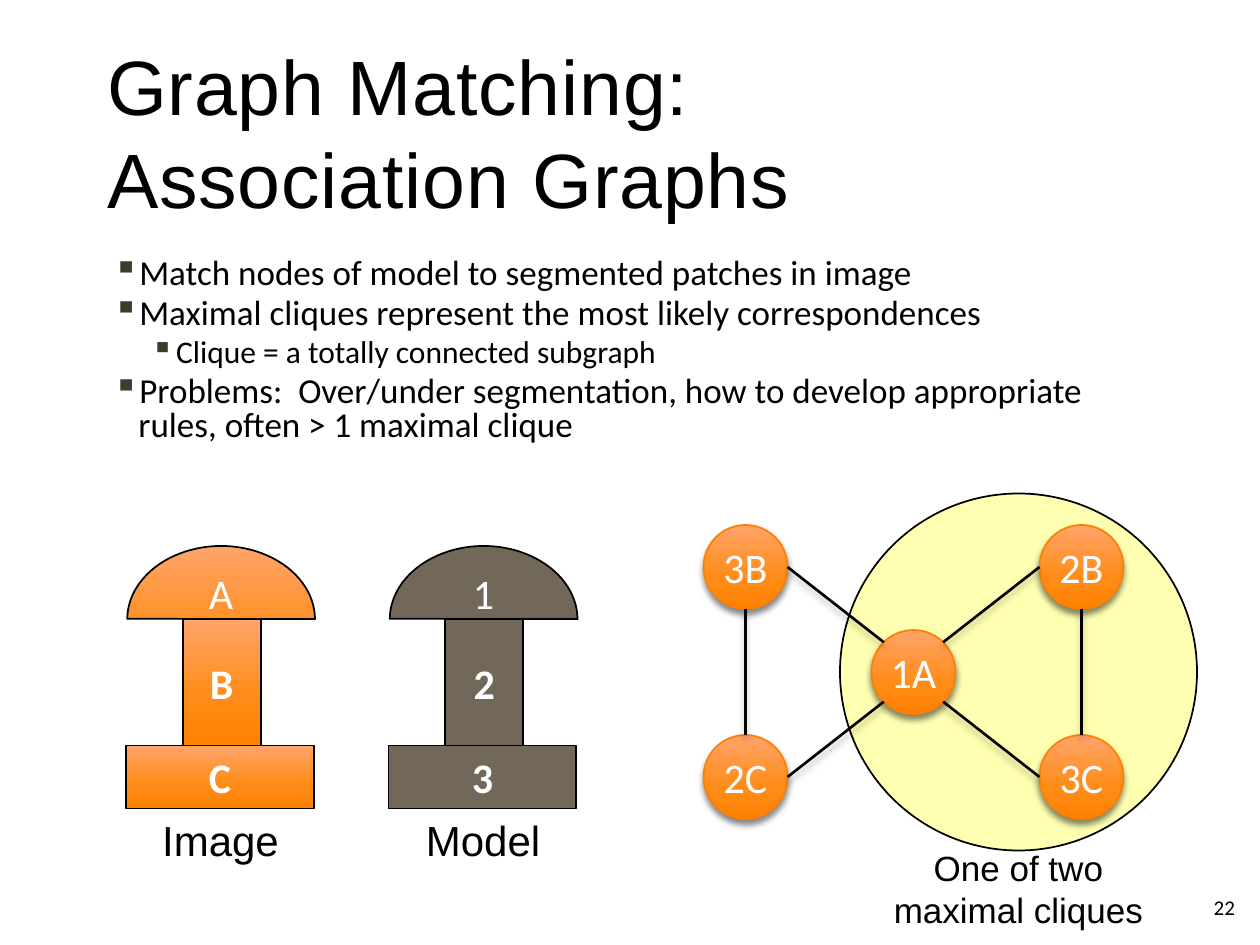
from copy import deepcopy
from math import sqrt
from lxml.etree import SubElement
from pptx import Presentation
from pptx.dml.color import RGBColor
from pptx.enum.shapes import MSO_CONNECTOR, MSO_SHAPE
from pptx.enum.text import MSO_ANCHOR, MSO_AUTO_SIZE, PP_ALIGN
from pptx.oxml.ns import qn
from pptx.util import Inches, Pt

BLACK = RGBColor(0x00, 0x00, 0x00)
WHITE = RGBColor(0xFF, 0xFF, 0xFF)
YELLOW = RGBColor(0xFF, 0xFF, 0x66)
BROWN = RGBColor(0x71, 0x68, 0x5A)
ORANGE = RGBColor(0xFF, 0x80, 0x00)
GLOW = [(0, RGBColor(0xFF, 0xA4, 0x6B)), (0.6, RGBColor(0xFF, 0x8D, 0x1A)), (1, ORANGE)]

deck = Presentation()
deck.slide_width, deck.slide_height = Inches(10), Inches(7.5)
slide = deck.slides.add_slide(deck.slide_layouts[5])
shapes = slide.shapes
# The slide is a grid of 120 columns by 90 rows
unit = deck.slide_width / 120


def put(frame, text, size=24, font="Calibri", color=BLACK, bold=False,
        align=PP_ALIGN.CENTER, anchor=MSO_ANCHOR.TOP, wrap=True, inset=None, track=None):
    frame.text = text
    frame.auto_size = MSO_AUTO_SIZE.NONE
    frame.word_wrap = wrap
    frame.vertical_anchor = anchor
    if inset is not None:
        frame.margin_left = frame.margin_right = inset
        frame.margin_top = frame.margin_bottom = inset
    for para in frame.paragraphs:
        para.alignment = align
        for run in para.runs:
            run.font.size, run.font.name = Pt(size), font
            run.font.bold, run.font.color.rgb = bold, color
            if track:
                run.font._element.set("spc", str(track))


def style(item, fill=None, line=BLACK, width=1, shade=None):
    """Set fill (a colour or gradient stops), line and shadow (opacity, blur, distance)."""
    props = item._element.spPr
    if isinstance(fill, list):
        item.fill.gradient()
        item.fill.gradient_angle = 270
        stops = props.find(qn("a:gradFill")).find(qn("a:gsLst"))
        stops.append(deepcopy(stops[-1]))
        for stop, (pos, color) in zip(item.fill.gradient_stops, fill):
            stop.position, stop.color.rgb = pos, color
    elif fill is not None:
        item.fill.solid()
        item.fill.fore_color.rgb = fill
    item.line.color.rgb, item.line.width = line, Pt(width)
    effect = SubElement(props, qn("a:effectLst"))
    if shade:
        alpha, blur, dist = shade
        outer = SubElement(effect, qn("a:outerShdw"), blurRad=str(Pt(blur)),
                           dist=str(Pt(dist)), dir="5400000", rotWithShape="0")
        tint = SubElement(outer, qn("a:srgbClr"), val="000000")
        SubElement(tint, qn("a:alpha"), val=str(alpha * 1000))


# Title
title = shapes.title
title.left, title.top, title.width, title.height = [int(n * unit) for n in (9, 5, 102, 15)]
put(title.text_frame, "Graph Matching:\vAssociation Graphs", size=44, font="Arial",
    align=PP_ALIGN.LEFT, anchor=MSO_ANCHOR.MIDDLE, track=50)

# Half-clear disc behind one clique
disc = shapes.add_shape(MSO_SHAPE.OVAL, *[int(n * unit) for n in (80, 47, 34, 34)])
style(disc, YELLOW)
tint = disc._element.spPr.find(qn("a:solidFill"))[0]
SubElement(tint, qn("a:alpha"), val="50000")

# Captions and page number
captions = [
    ("One of two maximal cliques", (82, 80, 30, 9.2), dict(size=20, font="Arial")),
    ("Image", (14, 77, 14, 6), dict(font="Arial")),
    ("Model", (39, 77, 14, 6), dict(font="Arial")),
    ("22", (106.8, 84, 12, 4.8),
     dict(size=12, align=PP_ALIGN.RIGHT, anchor=MSO_ANCHOR.MIDDLE)),
]
for text, place, form in captions:
    box = shapes.add_textbox(*[int(n * unit) for n in place])
    put(box.text_frame, text, **form)

# Bullets
points = [
    (0, "Match nodes of model to segmented patches in image"),
    (0, "Maximal cliques represent the most likely correspondences"),
    (1, "Clique = a totally connected subgraph"),
    (0, "Problems:  Over/under segmentation, how to develop appropriate rules, "
        "often > 1 maximal clique"),
]
body = shapes.add_textbox(*[int(n * unit) for n in (9, 24, 102, 20)]).text_frame
put(body, "\n".join(text for level, text in points), size=20, align=PP_ALIGN.LEFT)
for row, (para, (level, text)) in enumerate(zip(body.paragraphs, points)):
    para.level = level
    para.line_spacing = 0.8
    para.space_before = Pt(4 if row else 0)
    para.runs[0].font.size = Pt(20 - 2 * level)
    props = para._p.get_or_add_pPr()
    props.set("marL", str(Inches(0.25 + 0.3 * level)))
    props.set("indent", str(Inches(-0.2)))
    tint = SubElement(props, qn("a:buClr"))
    SubElement(tint, qn("a:srgbClr"), val="3E3D2D")
    SubElement(props, qn("a:buChar"), char="▪")

# Two figures, each of a post, a base and a dome
for left, fill, (dome, post, base) in [(37, BROWN, "123"), (12, GLOW, "ABC")]:
    parts = [
        (MSO_SHAPE.RECTANGLE, post, 5.4, 59, 7.44, 12),
        (MSO_SHAPE.RECTANGLE, base, 0, 71, 17.88, 6),
        (MSO_SHAPE.CHORD, dome, 0.12, 52, 17.88, 14),
    ]
    for kind, text, x, y, w, h in parts:
        part = shapes.add_shape(kind, *[int(n * unit) for n in (left + x, y, w, h)])
        flat = kind == MSO_SHAPE.RECTANGLE
        if not flat:
            part.adjustments[0], part.adjustments[1] = 108.25, 215.86
        style(part, fill)
        put(part.text_frame, text, color=WHITE, bold=flat, wrap=False, inset=0,
            anchor=MSO_ANCHOR.MIDDLE if flat else MSO_ANCHOR.TOP)

# Graph nodes, placed around the hub
hubx, huby, rad = 87, 64, 4
nodes = [("1A", 0, 0), ("2B", 1, -1), ("3C", 1, 1), ("3B", -1, -1), ("2C", -1, 1)]
for text, dx, dy in nodes:
    place = (hubx + 16 * dx - rad, huby + 10 * dy - rad, 2 * rad, 2 * rad)
    node = shapes.add_shape(MSO_SHAPE.OVAL, *[int(n * unit) for n in place])
    style(node, GLOW, line=ORANGE, shade=(48, 3.8, 3))
    put(node.text_frame, text, color=WHITE, anchor=MSO_ANCHOR.MIDDLE, inset=0)

# Graph edges: a spoke to each outer node, and one upright on each side
slant = rad / sqrt(2)
edges = [(hubx + slant * dx, huby + slant * dy, hubx + 12 * dx, huby + 10 * dy)
         for text, dx, dy in nodes[1:]]
edges += [(hubx + 16 * dx, huby - 6, hubx + 16 * dx, huby + 6) for dx in (1, -1)]
for ends in edges:
    edge = shapes.add_connector(MSO_CONNECTOR.STRAIGHT, *[int(n * unit) for n in ends])
    style(edge, width=1.5, shade=(28, 4, 3))

deck.save("out.pptx")
